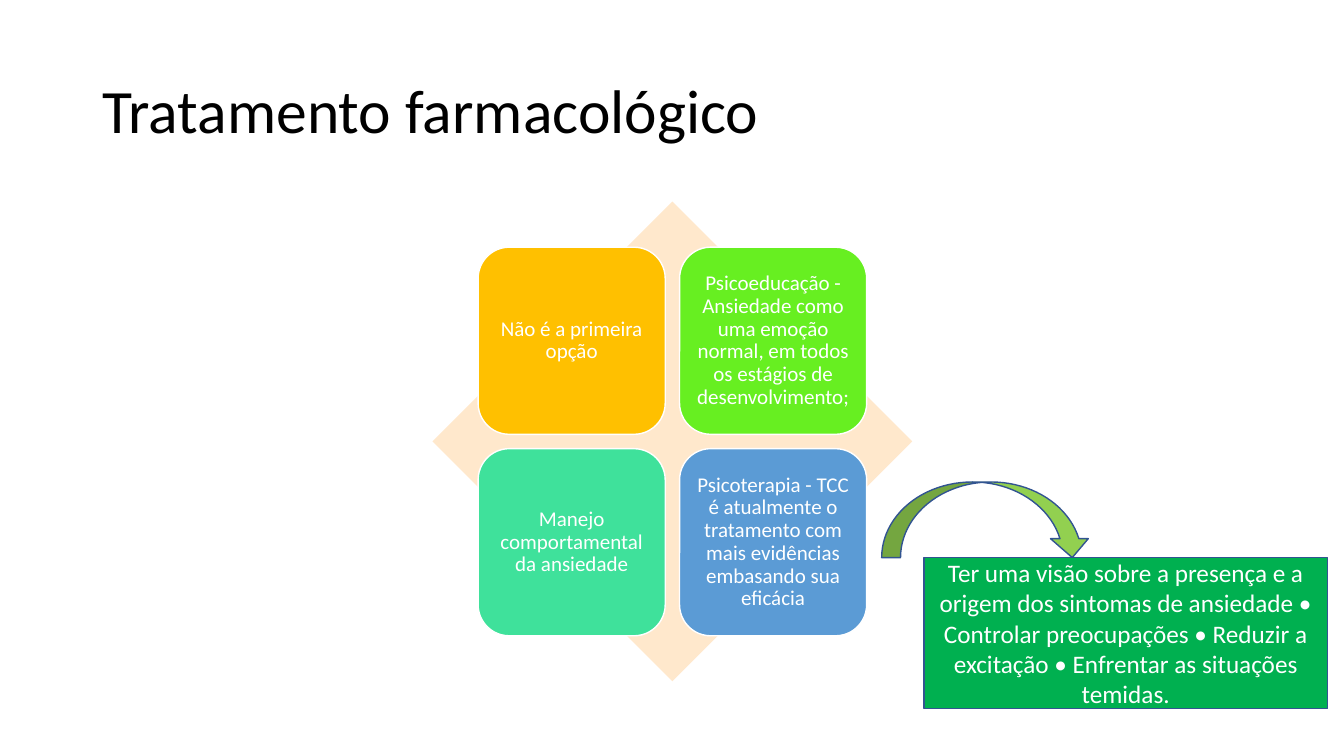
from pptx import Presentation
from pptx.dml import color
from pptx.enum import shapes, text
from pptx.util import Cm, Pt

FONT = "Calibri"
TILES = [
    ("Não é a primeira opção", "FFC000"),
    ("Psicoeducação - Ansiedade como uma emoção normal, em todos "
     "os estágios de desenvolvimento;", "67EF21"),
    ("Manejo comportamental da ansiedade", "3FE19B"),
    ("Psicoterapia - TCC é atualmente o tratamento com mais "
     "evidências embasando sua eficácia", "5B9BD5"),
]
NOTE = ("Ter uma visão sobre a presença e a origem dos sintomas de ansiedade • "
        "Controlar preocupações • Reduzir a excitação • "
        "Enfrentar as situações temidas.")


def paint(target, code):
    target.rgb = color.RGBColor.from_string(code)


def add_form(slide, kind, box, fill, line=None):
    form = slide.shapes.add_shape(kind, *map(Cm, box))
    form.shadow.inherit = False
    form.fill.solid()
    paint(form.fill.fore_color, fill)
    if line:
        paint(form.line.color, line)
        form.line.width = Pt(1)
    else:
        form.line.fill.background()
    return form


def write(form, words, size, code, align, space=1.0):
    frame = form.text_frame
    frame.text = words
    frame.word_wrap = True
    frame.auto_size = text.MSO_AUTO_SIZE.NONE
    frame.vertical_anchor = text.MSO_ANCHOR.MIDDLE
    para = frame.paragraphs[0]
    para.alignment = align
    para.line_spacing = space
    font = para.runs[0].font
    font.name = FONT
    font.size = Pt(size)
    paint(font.color, code)
    return frame


def add_title(slide, box):
    title = slide.shapes.title
    title.left, title.top, title.width, title.height = map(Cm, box)
    write(title, "Tratamento farmacológico", 44, "000000",
          text.PP_ALIGN.LEFT, 0.9)


def add_matrix(slide, left, top, side):
    add_form(slide, shapes.MSO_SHAPE.DIAMOND, (left, top, side, side), "FFE8CC")
    tile = side * 0.39
    inset = side * 0.095
    pitch = side - 2 * inset - tile
    for index, (words, fill) in enumerate(TILES):
        row, col = divmod(index, 2)
        box = (left + inset + col * pitch, top + inset + row * pitch, tile, tile)
        form = add_form(slide, shapes.MSO_SHAPE.ROUNDED_RECTANGLE, box,
                        fill, "FFFFFF")
        frame = write(form, words, 15, "FFFFFF", text.PP_ALIGN.CENTER, 0.9)
        frame.margin_left = frame.margin_right = Cm(0.15)
        frame.margin_top = frame.margin_bottom = Cm(0.15)


def add_note(slide, left, top, width, height):
    add_form(slide, shapes.MSO_SHAPE.CURVED_DOWN_ARROW,
             (left - 1.07, top - height / 2, 5.28, height / 2),
             "92D050", "325491")
    form = add_form(slide, shapes.MSO_SHAPE.RECTANGLE,
                    (left, top, width, height), "00B050", "325491")
    write(form, NOTE, 18, "FFFFFF", text.PP_ALIGN.CENTER)


def main():
    deck = Presentation()
    deck.slide_width = Cm(33.87)
    deck.slide_height = Cm(19.05)
    slide = deck.slides.add_slide(deck.slide_layouts[5])
    add_title(slide, (2.33, 1.01, 29.21, 3.68))
    add_matrix(slide, 10.9, 5.08, 12.09)
    add_note(slide, 23.29, 14.05, 10.16, 3.81)
    deck.save("out.pptx")


if __name__ == "__main__":
    main()
